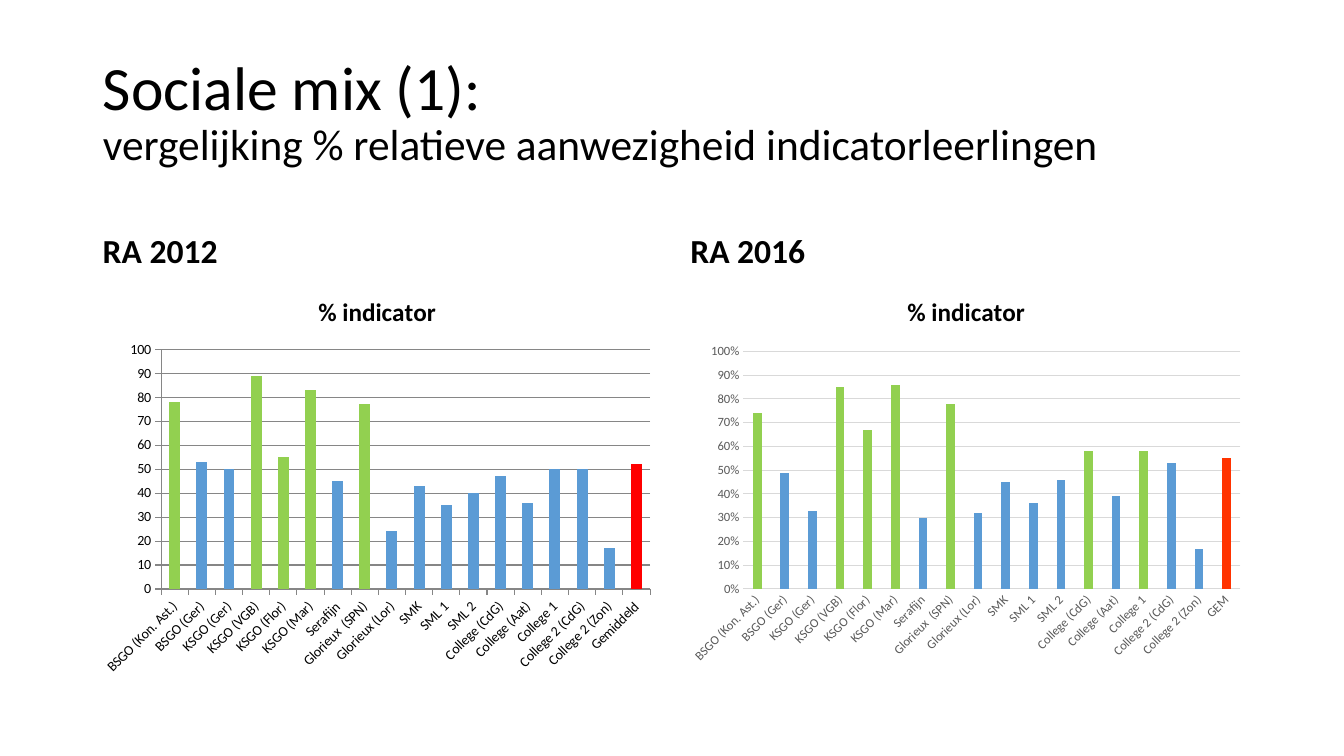
from dataclasses import dataclass

from lxml import etree
from pptx import Presentation
from pptx.chart.data import CategoryChartData
from pptx.dml.color import RGBColor
from pptx.enum.chart import XL_CHART_TYPE, XL_TICK_MARK
from pptx.enum.text import MSO_ANCHOR, MSO_AUTO_SIZE, PP_ALIGN
from pptx.oxml.ns import qn
from pptx.util import Cm, Pt

COLUMN = XL_CHART_TYPE.COLUMN_CLUSTERED
OUT, NO_TICK = XL_TICK_MARK.OUTSIDE, XL_TICK_MARK.NONE
MIDDLE, BOTTOM = MSO_ANCHOR.MIDDLE, MSO_ANCHOR.BOTTOM
LEFT = PP_ALIGN.LEFT
NO_FIT = MSO_AUTO_SIZE.NONE


@dataclass(frozen=True)
class Theme:
    font: str = "Calibri"
    black: str = "000000"
    grey: str = "595959"
    pale: str = "D9D9D9"
    rule: str = "868686"
    blue: str = "5B9BD5"
    green: str = "92D050"
    red: str = "FF0000"
    orange: str = "FF3300"
    title: int = 44
    subtitle: int = 31
    heading: int = 24
    chart_title: int = 18
    label: int = 10
    small: int = 9


T = Theme()


def style(font, size, color=T.black, bold=False):
    font.name = T.font
    font.size = Pt(size)
    font.bold = bold
    font.color.rgb = RGBColor.from_string(color)


def place_plot(chart, box):
    area = chart._chartSpace.find(".//" + qn("c:plotArea"))
    for old in area.findall(qn("c:layout")):
        area.remove(old)
    layout = etree.Element(qn("c:layout"))
    manual = etree.SubElement(layout, qn("c:manualLayout"))
    pairs = [("layoutTarget", "inner"), ("xMode", "edge"), ("yMode", "edge"), *zip("xywh", box)]
    for tag, val in pairs:
        etree.SubElement(manual, qn("c:" + tag)).set("val", str(val))
    area.insert(0, layout)


schools = ["BSGO (Kon. Ast.)", "BSGO (Ger)", "KSGO (Ger)", "KSGO (VGB)", "KSGO (Flor)",
           "KSGO (Mar)", "Serafijn", "Glorieux  (SPN)", "Glorieux (Lor)", "SMK", "SML 1",
           "SML 2", "College (CdG)", "College (Aat)", "College 1", "College 2 (CdG)",
           "College 2 (Zon)"]
green_2012 = [0, 3, 4, 5, 7]

panels = [
    dict(heading="RA 2012", left=2.34, width=14.33, height=10.24, mean="Gemiddeld",
         series="% indicator", fmt="General", top=100, step=10, gap=150, overlap=0,
         values=[78, 53, 50, 89, 55, 83, 45, 77, 24, 43, 35, 40, 47, 36, 50, 50, 17, 52],
         green=green_2012, mean_color=T.red, size=T.label, color=T.black, tick=OUT,
         grid=T.rule, axis=T.rule, value_line=True, plot=(0.12, 0.18, 0.86, 0.59)),
    dict(heading="RA 2016", left=17.15, width=14.4, height=9.98, mean="GEM",
         series="Series 1", fmt="0%", top=1, step=0.1, gap=219, overlap=-27,
         values=[0.74, 0.49, 0.33, 0.85, 0.67, 0.86, 0.3, 0.78, 0.32, 0.45, 0.36, 0.46,
                 0.58, 0.39, 0.58, 0.53, 0.17, 0.55],
         green=green_2012 + [12, 14], mean_color=T.orange, size=T.small, color=T.grey,
         tick=NO_TICK, grid=T.pale, axis=T.pale, value_line=False,
         plot=(0.11, 0.19, 0.87, 0.6)),
]

prs = Presentation()
prs.slide_width, prs.slide_height = Cm(33.87), Cm(19.05)
s = prs.slides.add_slide(prs.slide_layouts[5])

title = s.shapes.title
title.left, title.top, title.width, title.height = Cm(2.34), Cm(1.02), Cm(29.21), Cm(3.68)
tf = title.text_frame
tf.auto_size = NO_FIT
tf.vertical_anchor = MIDDLE
p = tf.paragraphs[0]
p.alignment = LEFT
p.line_spacing = 0.9
r = p.add_run()
r.text = "Sociale mix (1):"
style(r.font, T.title)
p.add_line_break()
r = p.add_run()
r.text = "vergelijking % relatieve aanwezigheid indicatorleerlingen"
style(r.font, T.subtitle)

for panel in panels:
    left, width = Cm(panel["left"]), Cm(panel["width"])
    tf = s.shapes.add_textbox(left, Cm(4.67), width, Cm(2.29)).text_frame
    tf.word_wrap = True
    tf.vertical_anchor = BOTTOM
    p = tf.paragraphs[0]
    p.line_spacing = 0.9
    p.space_before = Pt(10)
    r = p.add_run()
    r.text = panel["heading"]
    style(r.font, T.heading, bold=True)

    data = CategoryChartData(number_format=panel["fmt"])
    data.categories = schools + [panel["mean"]]
    data.add_series(panel["series"], panel["values"])
    chart = s.shapes.add_chart(COLUMN, left, Cm(6.96), width, Cm(panel["height"]), data).chart
    style(chart.font, T.label)
    chart.has_legend = False
    chart.has_title = True
    chart.chart_title.include_in_layout = False
    r = chart.chart_title.text_frame.paragraphs[0].add_run()
    r.text = "% indicator"
    style(r.font, T.chart_title, bold=True)
    place_plot(chart, panel["plot"])

    cat, val = chart.category_axis, chart.value_axis
    for axis in (cat, val):
        axis.major_tick_mark = panel["tick"]
        axis.minor_tick_mark = NO_TICK
        style(axis.tick_labels.font, panel["size"], panel["color"])
        axis.format.line.width = Pt(0.75)
        axis.format.line.color.rgb = RGBColor.from_string(panel["axis"])
    if not panel["value_line"]:
        val.format.line.fill.background()
    cat._element.find(qn("c:txPr")).find(qn("a:bodyPr")).set("rot", "-2700000")
    val.minimum_scale, val.maximum_scale = 0, panel["top"]
    val.major_unit = panel["step"]
    val.tick_labels.number_format = panel["fmt"]
    val.tick_labels.number_format_is_linked = False
    grid = val.major_gridlines.format.line
    grid.width = Pt(0.75)
    grid.color.rgb = RGBColor.from_string(panel["grid"])

    plot = chart.plots[0]
    plot.vary_by_categories = False
    plot.gap_width, plot.overlap = panel["gap"], panel["overlap"]
    bars = plot.series[0]
    bars.format.fill.solid()
    bars.format.fill.fore_color.rgb = RGBColor.from_string(T.blue)
    accents = {i: T.green for i in panel["green"]} | {len(schools): panel["mean_color"]}
    for i, color in accents.items():
        fill = bars.points[i].format.fill
        fill.solid()
        fill.fore_color.rgb = RGBColor.from_string(color)

prs.save("out.pptx")
